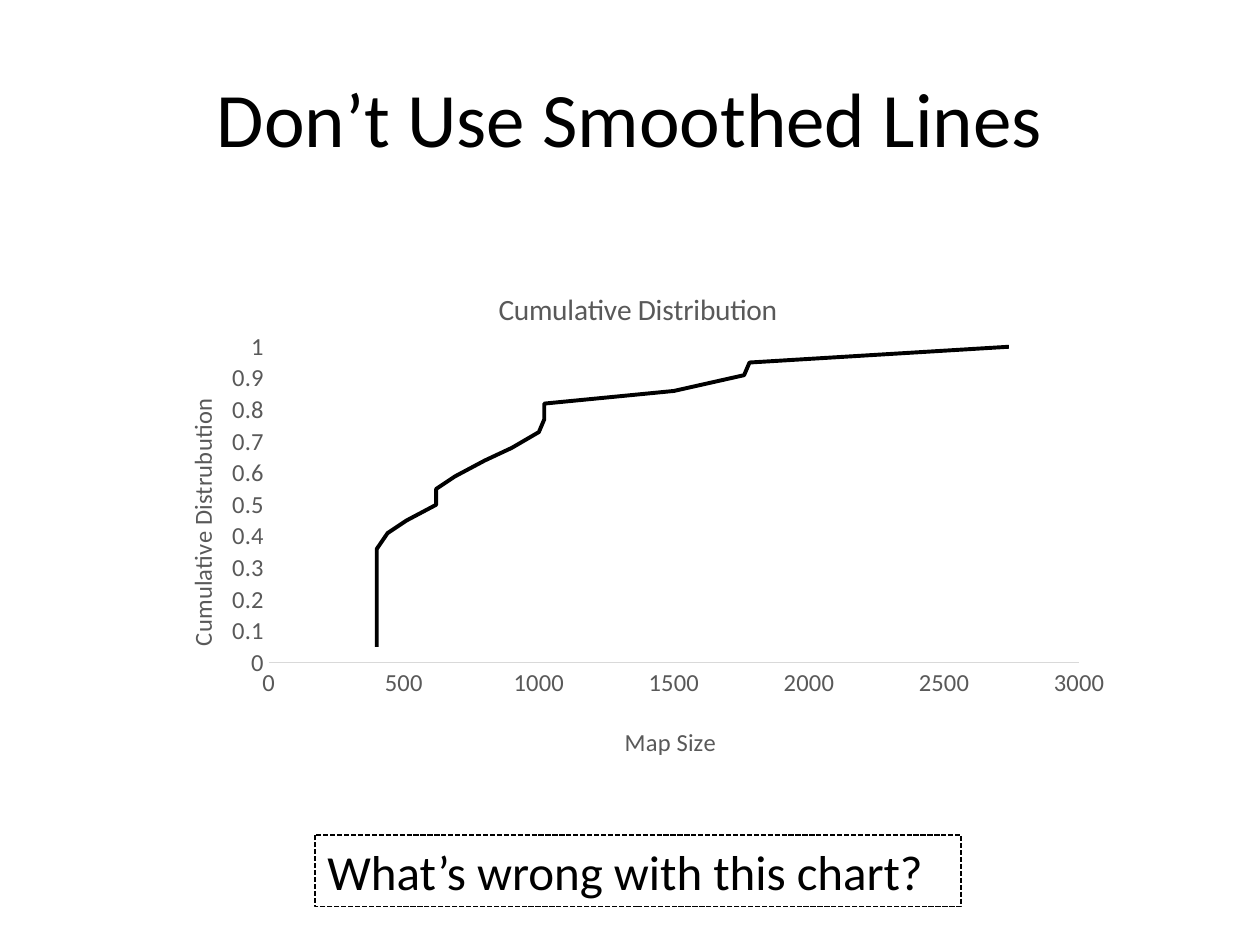
from lxml import etree
from pptx import Presentation
from pptx.chart.data import XyChartData
from pptx.dml.color import RGBColor
from pptx.enum.chart import XL_CHART_TYPE, XL_TICK_MARK
from pptx.enum.dml import MSO_LINE
from pptx.enum.shapes import MSO_SHAPE
from pptx.enum.text import MSO_ANCHOR, PP_ALIGN
from pptx.oxml.ns import qn
from pptx.util import Pt

SCATTER = XL_CHART_TYPE.XY_SCATTER_SMOOTH_NO_MARKERS
NO_TICK = XL_TICK_MARK.NONE
DASH = MSO_LINE.SQUARE_DOT
RECT = MSO_SHAPE.RECTANGLE
MIDDLE = MSO_ANCHOR.MIDDLE
CENTER, LEFT = PP_ALIGN.CENTER, PP_ALIGN.LEFT

FONT = "Calibri"
COLORS = {"ink": "000000", "label": "595959", "axis": "D9D9D9"}
SIZES = [400] * 8 + [440, 510, 620, 620, 690, 800, 900, 1000,
                     1020, 1020, 1500, 1760, 1780, 2740]


def color(name):
    return RGBColor.from_string(COLORS[name])


def style(font, size, name):
    font.name = FONT
    font.size = Pt(size)
    font.bold = False
    font.color.rgb = color(name)


def write(shape, text, size, align):
    frame = shape.text_frame
    frame.word_wrap = True
    frame.vertical_anchor = MIDDLE
    para = frame.paragraphs[0]
    para.text = text
    para.alignment = align
    style(para.font, size, "ink")


def place(node, index, **spots):
    for old in node.findall(qn("c:layout")):
        node.remove(old)
    layout = etree.Element(qn("c:layout"))
    manual = etree.SubElement(layout, qn("c:manualLayout"))
    if "w" in spots:
        etree.SubElement(manual, qn("c:layoutTarget"), val="inner")
    for key in ("x", "y"):
        etree.SubElement(manual, qn(f"c:{key}Mode"), val="edge")
    for key, value in spots.items():
        etree.SubElement(manual, qn(f"c:{key}"), val=str(value))
    node.insert(index, layout)


def label(title, text, size, x, y):
    para = title.text_frame.paragraphs[0]
    para.text = text
    style(para.font, size, "label")
    place(title._element, 1, x=x, y=y)


def add_title(slide, x, y, w, h):
    box = slide.shapes.add_textbox(Pt(x), Pt(y), Pt(w), Pt(h))
    write(box, "Don’t Use Smoothed Lines", 44, CENTER)


def add_plot(slide, x, y, w, h):
    name = "Cumulative Distribution"
    data = XyChartData()
    line = data.add_series(name)
    for rank, size in enumerate(SIZES, 1):
        line.add_data_point(size, round(rank / len(SIZES), 2))
    chart = slide.shapes.add_chart(SCATTER, Pt(x), Pt(y), Pt(w), Pt(h), data).chart
    style(chart.font, 14, "label")
    chart.has_legend = False
    chart.has_title = True
    label(chart.chart_title, name, 16.8, 0.36, 0.06)

    across, up = chart.category_axis, chart.value_axis
    for axis, top, step in ((across, 3000, 500), (up, 1, 0.1)):
        axis.minimum_scale, axis.maximum_scale = 0, top
        axis.major_unit = step
        axis.has_major_gridlines = False
        axis.major_tick_mark = axis.minor_tick_mark = NO_TICK
        axis.tick_labels.number_format = "General"
        axis.tick_labels.number_format_is_linked = False
        style(axis.tick_labels.font, 14, "label")
    label(across.axis_title, "Map Size", 14, 0.49, 0.89)
    label(up.axis_title, "Cumulative Distrubution", 14, 0.04, 0.27)
    across.format.line.color.rgb = color("axis")
    across.format.line.width = Pt(0.75)
    up.format.line.fill.background()

    series = chart.plots[0].series[0]
    series.smooth = True
    series.format.line.color.rgb = color("ink")
    series.format.line.width = Pt(2.25)
    area = next(chart._chartSpace.iter(qn("c:plotArea")))
    place(area, 0, x=0.13, y=0.18, w=0.83, h=0.6)


def add_prompt(slide, x, y, w, h):
    box = slide.shapes.add_shape(RECT, Pt(x), Pt(y), Pt(w), Pt(h))
    box.shadow.inherit = False
    box.fill.background()
    box.line.color.rgb = color("ink")
    box.line.width = Pt(1)
    box.line.dash_style = DASH
    write(box, "What’s wrong with this chart?", 28, LEFT)


def main():
    deck = Presentation()
    deck.slide_width, deck.slide_height = Pt(720), Pt(540)
    slide = deck.slides.add_slide(deck.slide_layouts[6])
    add_title(slide, 36, 21.6, 648, 90)
    add_plot(slide, 81, 144, 558, 301)
    add_prompt(slide, 180, 477, 369, 41)
    deck.save("out.pptx")


if __name__ == "__main__":
    main()
